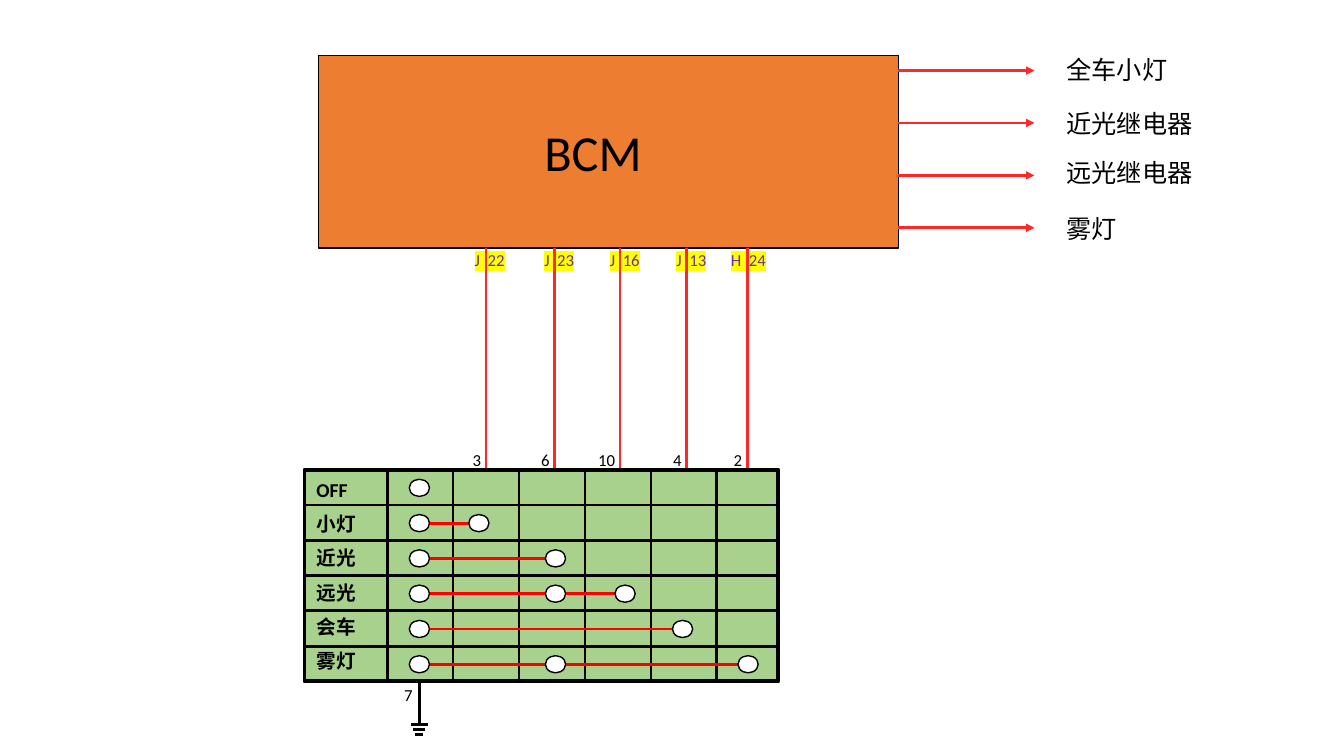
import lxml.etree
import pptx
import pptx.dml.color
import pptx.enum.shapes
import pptx.enum.text
import pptx.oxml
import pptx.oxml.ns
import pptx.util

COLS, ROWS = 1333, 750
qn = pptx.oxml.ns.qn
SHAPE = pptx.enum.shapes.MSO_SHAPE
ALIGN = pptx.enum.text.PP_ALIGN

deck = pptx.Presentation()
deck.slide_width = pptx.util.Inches(13.33)
deck.slide_height = pptx.util.Inches(7.5)
slide = deck.slides.add_slide(deck.slide_layouts[6])

PINS = [
    ("J  22", 461, 482, "3"),
    ("J  23", 530, 550, "6"),
    ("J  16", 595, 615, "10"),
    ("J  13", 661, 681, "4"),
    ("H  24", 715, 741, "2"),
]
LOADS = [("全车小灯", -6), ("近光继电器", 48), ("远光继电器", 96), ("雾灯", 152)]
MODES = [
    ("OFF", [114]),
    ("小灯", [114, 173]),
    ("近光", [114, 249]),
    ("远光", [114, 249, 318]),
    ("会车", [114, 375]),
    ("雾灯", [114, 249, 440]),
]


def grid(x, y):
    return round(x * deck.slide_width / COLS), round(y * deck.slide_height / ROWS)


def color(code):
    return pptx.dml.color.RGBColor.from_string(code)


def text(words, x, y, w, h, size=12, ink="000000", bold=False, align=ALIGN.LEFT, mark=None):
    box = slide.shapes.add_textbox(*grid(x, y), *grid(w, h))
    box.text_frame.word_wrap = True
    line = box.text_frame.paragraphs[0]
    line.alignment = align
    run = line.add_run()
    run.text = words
    font = run.font
    font.size, font.bold, font.name = pptx.util.Pt(size), bold, "Calibri"
    font.color.rgb = color(ink)
    if mark:
        light = pptx.oxml.parse_xml(
            '<a:highlight xmlns:a="http://schemas.openxmlformats.org/drawingml/2006/main">'
            f'<a:srgbClr val="{mark}"/></a:highlight>')
        run.font.fill
        run._r.rPr.find(qn("a:solidFill")).addnext(light)


def shape(kind, x, y, w, h, fill, width=1):
    item = slide.shapes.add_shape(kind, *grid(x, y), *grid(w, h))
    item.shadow.inherit = False
    item.fill.solid()
    item.fill.fore_color.rgb = color(fill)
    item.line.color.rgb = color("000000")
    item.line.width = pptx.util.Pt(width)


def wire(x1, y1, x2, y2, ink="000000", arrow=False):
    item = slide.shapes.add_connector(
        pptx.enum.shapes.MSO_CONNECTOR.STRAIGHT, *grid(x1, y1), *grid(x2, y2))
    item.line.color.rgb = color(ink)
    item.line.width = pptx.util.Pt(2)
    if arrow:
        lxml.etree.SubElement(item.line._get_or_add_ln(), qn("a:tailEnd"), type="triangle")
    lxml.etree.SubElement(item._element.spPr, qn("a:effectLst"))


def module(x, y, w, h):
    for name, left, _, _ in PINS:
        text(name, left, y + h - 3, 55, 30, ink="7030A0", mark="FFFF00")
    shape(SHAPE.RECTANGLE, x, y, w, h, "ED7D31")
    text("BCM", x + 214, y + 60, 154, 71, size=36)


def loads(x, y, w, h):
    for i, (name, top) in enumerate(LOADS):
        row = y + 15 + 52 * i
        wire(x, row, x + 135, row, ink="FF2727", arrow=True)
        text(name, x + 157, y + top, w - 157, 40, size=18)


def feeds(y, h):
    for _, _, x, number in PINS:
        wire(x, y + h, x, y, ink="FF2727")
        text(number, x - 35, y + h - 26, 40, 30, align=ALIGN.RIGHT)


def switch(x, y, w, h):
    pitch = h / len(MODES)
    shape(SHAPE.RECTANGLE, x, y, w, h, "A9D18E", width=2.75)
    for i in range(1, len(MODES)):
        wire(x, y + pitch * i, x + w, y + pitch * i)
    for i in range(6):
        col = x + 82 + 65.4 * i
        wire(col, y, col, y + h)
    for i, (name, stops) in enumerate(MODES):
        mid = y + pitch * i + 18
        text(name, x + 2, y + 3 + 34 * i, 66, 34, size=14, bold=True)
        for a, b in zip(stops, stops[1:]):
            wire(x + a + 10, mid, x + b - 10, mid, ink="FF0000")
        for stop in stops:
            shape(SHAPE.OVAL, x + stop - 10, mid - 8.5, 20, 17, "FFFFFF")


def ground(x, y, w, h):
    mid = x + w / 2
    wire(mid, y, mid, y + h - 12)
    for i, half in enumerate((8.5, 6, 4)):
        row = y + h - 10 + 5 * i
        wire(mid - half, row, mid + half, row)
    text("7", mid - 25, y - 4, 28, 30)


def main():
    module(316, 55, 575, 191)
    loads(891, 55, 320, 191)
    feeds(246, 221)
    switch(302, 466, 470, 210)
    ground(407, 678, 18, 51)
    deck.save("out.pptx")


if __name__ == "__main__":
    main()
